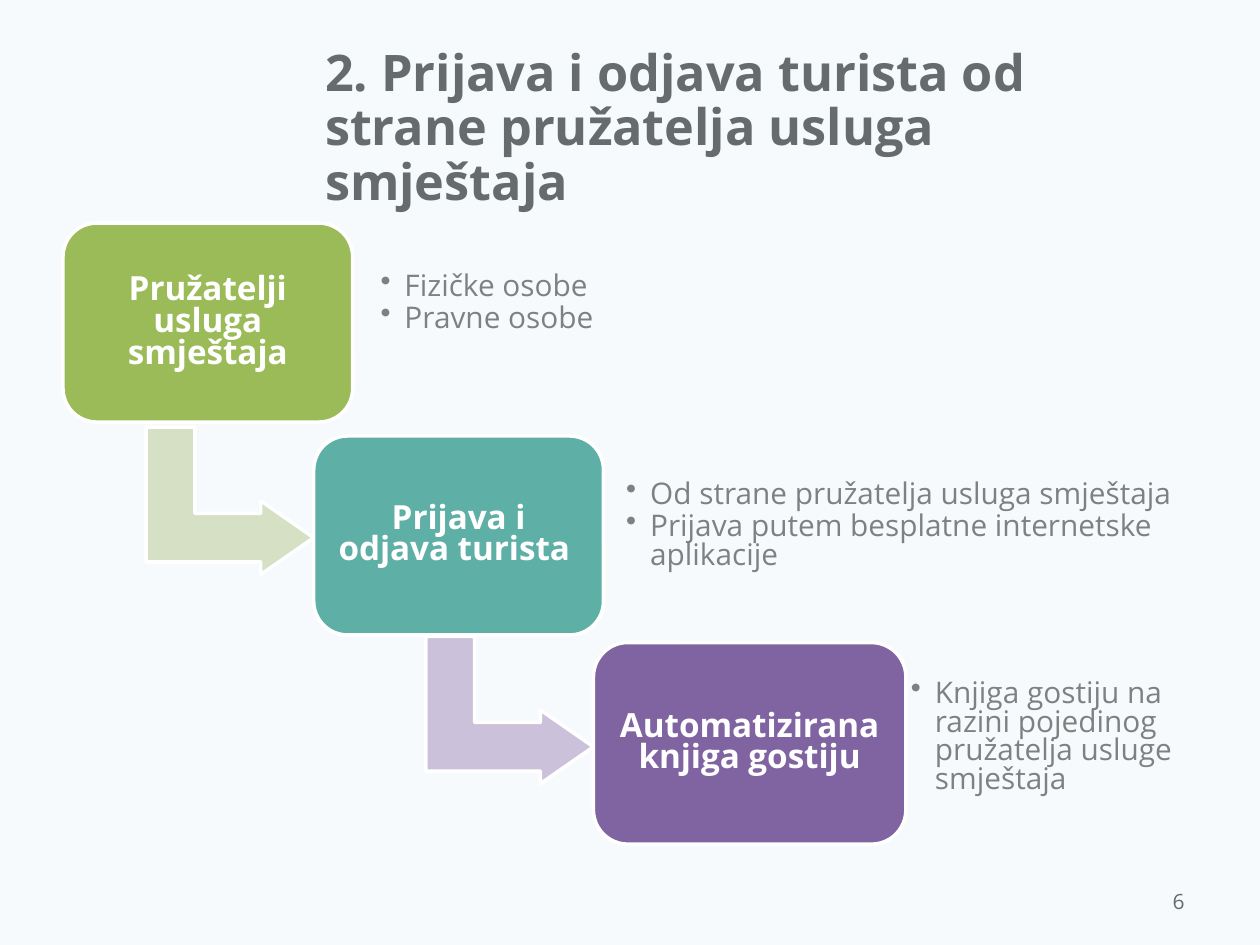
"""Build a slide with a three-step staircase on tourist check-in and check-out."""
from dataclasses import dataclass
from typing import Any, NamedTuple

from lxml.etree import SubElement
from pptx import Presentation
from pptx.dml.color import RGBColor
from pptx.enum.shapes import MSO_SHAPE
from pptx.enum.text import MSO_ANCHOR, MSO_AUTO_SIZE, PP_ALIGN
from pptx.oxml.ns import qn
from pptx.util import Inches, Pt

COLUMNS, ROWS = 100, 75
SLIDE_WIDTH, SLIDE_HEIGHT = Inches(10), Inches(7.5)


@dataclass(frozen=True)
class Theme:
    font: str = "Open Sans"
    background: str = "F6FAFD"
    heading: str = "666B6E"
    detail: str = "808080"
    light: str = "FFFFFF"
    green: str = "9BBB59"
    pale_green: str = "D5E0C4"
    teal: str = "5EAFA6"
    purple: str = "8064A2"
    pale_purple: str = "CCC1DA"
    title_size: float = 28.8
    step_size: float = 19
    detail_size: float = 17
    number_size: float = 12
    outline: float = 2


class Area(NamedTuple):
    column: float
    row: float
    columns: float
    rows: float


class Step(NamedTuple):
    label: str
    color: str
    area: Area
    details: tuple[str, ...]
    details_area: Area


class Arrow(NamedTuple):
    color: str
    area: Area


THEME = Theme()
TITLE = "2. Prijava i odjava turista od strane pružatelja usluga smještaja"
TITLE_AREA = Area(24.8, 3, 70.2, 12.5)
NUMBER_AREA = Area(71.7, 69.5, 23.3, 4)
STEPS = (
    Step("Pružatelji usluga smještaja", THEME.green, Area(5, 17.7, 23, 15.8),
         ("Fizičke osobe", "Pravne osobe"), Area(29.5, 19.5, 34.2, 9.3)),
    Step("Prijava i odjava turista ", THEME.teal, Area(24.9, 34.6, 23, 15.8),
         ("Od strane pružatelja usluga smještaja",
          "Prijava putem besplatne internetske aplikacije"),
         Area(49, 35.1, 46, 13.4)),
    Step("Automatizirana knjiga gostiju", THEME.purple, Area(47.1, 51, 24.8, 16),
         ("Knjiga gostiju na razini pojedinog pružatelja usluge smještaja",),
         Area(71.6, 53, 23.4, 11.1)),
)
ARROWS = (
    Arrow(THEME.pale_green, Area(12.4, 33.1, 11.7, 13.3)),
    Arrow(THEME.pale_purple, Area(34.6, 49.7, 11.7, 13.3)),
)


def apply(target: Any, values: dict[str, Any]) -> None:
    """Set each named attribute of the target."""
    for name, value in values.items():
        setattr(target, name, value)


def place(area: Area) -> tuple[int, int, int, int]:
    """Turn grid cells into left, top, width and height."""
    cell_width, cell_height = SLIDE_WIDTH / COLUMNS, SLIDE_HEIGHT / ROWS
    return (round(area.column * cell_width), round(area.row * cell_height),
            round(area.columns * cell_width), round(area.rows * cell_height))


def format_frame(frame: Any, anchor: MSO_ANCHOR, inset: float | None = None) -> None:
    """Wrap and anchor a text frame, with equal insets if given."""
    apply(frame, {"word_wrap": True, "auto_size": MSO_AUTO_SIZE.NONE,
                  "vertical_anchor": anchor})
    if inset is not None:
        sides = ("left", "right", "top", "bottom")
        apply(frame, {f"margin_{side}": Inches(inset) for side in sides})


def write(paragraph: Any, text: str, size: float, color: str, bold: bool = False,
          **layout: Any) -> None:
    """Fill one paragraph with formatted text."""
    apply(paragraph, layout)
    run = paragraph.add_run()
    run.text = text
    apply(run.font, {"name": THEME.font, "size": Pt(size), "bold": bold})
    run.font.color.rgb = RGBColor.from_string(color)


def add_outlined(slide: Any, kind: MSO_SHAPE, area: Area, color: str,
                 adjustments: tuple[float, ...]) -> Any:
    """Draw a filled preset shape with a light outline."""
    shape = slide.shapes.add_shape(kind, *place(area))
    shape.shadow.inherit = False
    shape.fill.solid()
    shape.fill.fore_color.rgb = RGBColor.from_string(color)
    shape.line.color.rgb = RGBColor.from_string(THEME.light)
    shape.line.width = Pt(THEME.outline)
    for index, value in enumerate(adjustments):
        shape.adjustments[index] = value
    return shape


def add_arrow(slide: Any, arrow: Arrow) -> None:
    """Draw a bent arrow leading down to the next step."""
    shape = add_outlined(slide, MSO_SHAPE.BENT_UP_ARROW, arrow.area, arrow.color,
                         (0.33, 0.25, 0.36))
    shape.rotation = 90


def add_details(slide: Any, step: Step) -> None:
    """Write the bulleted details beside a step."""
    frame = slide.shapes.add_textbox(*place(step.details_area)).text_frame
    format_frame(frame, MSO_ANCHOR.MIDDLE, 0.07)
    for index, detail in enumerate(step.details):
        paragraph = frame.add_paragraph() if index else frame.paragraphs[0]
        properties = paragraph._p.get_or_add_pPr()
        indent = Inches(0.19)
        properties.set("marL", str(indent))
        properties.set("indent", str(-indent))
        SubElement(properties, qn("a:buChar"), char="•")
        write(paragraph, detail, THEME.detail_size, THEME.detail,
              line_spacing=0.8, space_after=Pt(2))


def add_step(slide: Any, step: Step) -> None:
    """Draw a step box with its label and details."""
    box = add_outlined(slide, MSO_SHAPE.ROUNDED_RECTANGLE, step.area, step.color,
                       (0.17,))
    format_frame(box.text_frame, MSO_ANCHOR.MIDDLE, 0.08)
    write(box.text_frame.paragraphs[0], step.label, THEME.step_size, THEME.light,
          bold=True, alignment=PP_ALIGN.CENTER, line_spacing=0.8)
    add_details(slide, step)


def add_title(slide: Any) -> None:
    """Move and fill the title placeholder."""
    title = slide.shapes.title
    apply(title, dict(zip(("left", "top", "width", "height"), place(TITLE_AREA))))
    format_frame(title.text_frame, MSO_ANCHOR.TOP)
    title.text_frame.margin_top = Inches(0.08)
    write(title.text_frame.paragraphs[0], TITLE, THEME.title_size, THEME.heading,
          bold=True, alignment=PP_ALIGN.LEFT, line_spacing=0.9)


def add_number(slide: Any) -> None:
    """Write the slide number at the lower right."""
    frame = slide.shapes.add_textbox(*place(NUMBER_AREA)).text_frame
    format_frame(frame, MSO_ANCHOR.MIDDLE)
    write(frame.paragraphs[0], "6", THEME.number_size, THEME.heading,
          alignment=PP_ALIGN.RIGHT)


def main() -> None:
    """Assemble and save the slide."""
    presentation = Presentation()
    apply(presentation, {"slide_width": SLIDE_WIDTH, "slide_height": SLIDE_HEIGHT})
    slide = presentation.slides.add_slide(presentation.slide_layouts[5])
    slide.background.fill.solid()
    slide.background.fill.fore_color.rgb = RGBColor.from_string(THEME.background)
    add_title(slide)
    for arrow in ARROWS:
        add_arrow(slide, arrow)
    for step in STEPS:
        add_step(slide, step)
    add_number(slide)
    presentation.save("out.pptx")


if __name__ == "__main__":
    main()
